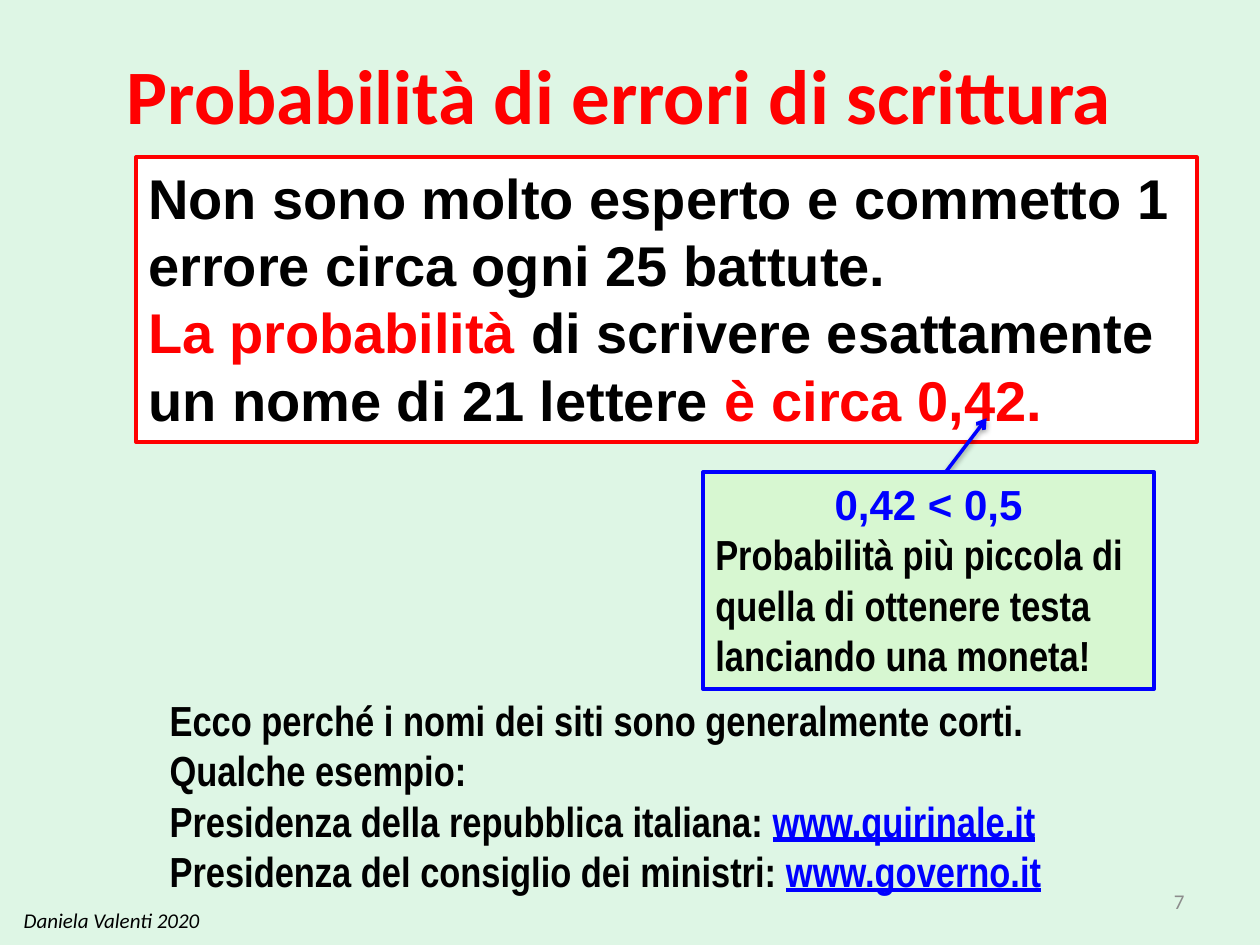
import pptx
import pptx.util
import pptx.dml.color
import pptx.enum.shapes
import pptx.enum.text
import pptx.oxml

Cm = pptx.util.Cm
Pt = pptx.util.Pt
RGBColor = pptx.dml.color.RGBColor
Align = pptx.enum.text.PP_ALIGN
Anchor = pptx.enum.text.MSO_ANCHOR

MINT = RGBColor(0xDE, 0xF6, 0xE5)
GREEN = RGBColor(0xD7, 0xF7, 0xD1)
WHITE = RGBColor(0xFF, 0xFF, 0xFF)
BLACK = RGBColor(0, 0, 0)
GREY = RGBColor(0x8C, 0x8C, 0x8C)
RED = RGBColor(0xFF, 0, 0)
BLUE = RGBColor(0, 0, 0xFF)

HEADING = {"name": "Calibri", "size": Pt(44), "bold": True}
STATEMENT = {"name": "Arial", "size": Pt(32), "bold": True}
RESULT = {"name": "Arial", "size": Pt(24), "bold": True}
NOTE = {"name": "Arial Narrow", "size": Pt(24), "bold": True}
LINK = {**NOTE, "underline": True}
AUTHOR = {"name": "Calibri", "size": Pt(12), "italic": True}
NUMBER = {"name": "Calibri", "size": Pt(12)}

TITLE = {
    "place": (1.7, 0.84, 21.59, 2.11),
    "anchor": Anchor.MIDDLE,
    "paras": [(Align.CENTER, [("Probabilità di errori di scrittura", HEADING, RED)])],
}
BOXES = [
    {
        "place": (0, 18.03, 4.5, 1.02),
        "anchor": Anchor.MIDDLE,
        "paras": [(Align.CENTER, [("Daniela Valenti 2020", AUTHOR, BLACK)])],
    },
    {
        "place": (18.2, 17.65, 5.93, 1.02),
        "anchor": Anchor.MIDDLE,
        "paras": [(Align.RIGHT, [("7", NUMBER, GREY)])],
    },
    {
        "place": (2.74, 3.17, 21.39, 5.74),
        "fill": WHITE,
        "line": RED,
        "paras": [
            (Align.LEFT, [("Non sono molto esperto e commetto 1 errore circa ogni 25 battute.", STATEMENT, BLACK)]),
            (Align.LEFT, [
                ("La probabilità ", STATEMENT, RED),
                ("di scrivere esattamente un nome di 21 lettere ", STATEMENT, BLACK),
                ("è circa 0,42.", STATEMENT, RED),
            ]),
        ],
    },
    {
        "place": (14.17, 9.52, 9.1, 4.37),
        "fill": GREEN,
        "line": BLUE,
        "paras": [
            (Align.CENTER, [("0,42 < 0,5", RESULT, BLUE)]),
            (Align.LEFT, [("Probabilità più piccola di quella di ottenere testa lanciando una moneta!", NOTE, BLACK)]),
        ],
    },
    {
        "place": (3.17, 13.87, 20.53, 4.37),
        "paras": [
            (Align.LEFT, [("Ecco perché i nomi dei siti sono generalmente corti. Qualche esempio:", NOTE, BLACK)]),
            (Align.LEFT, [("Presidenza della repubblica italiana: ", NOTE, BLACK), ("www.quirinale.it", LINK, BLUE)]),
            (Align.LEFT, [("Presidenza del consiglio dei ministri: ", NOTE, BLACK), ("www.governo.it", LINK, BLUE)]),
        ],
    },
]
ARROW = (18.42, 10.36, 19.89, 8.43)
ARROW_BEFORE = GREEN

NAMESPACE = 'xmlns:a="http://schemas.openxmlformats.org/drawingml/2006/main"'
ARROW_HEAD = f'<a:tailEnd {NAMESPACE} type="arrow"/>'
ARROW_SHADOW = (
    f'<a:effectLst {NAMESPACE}><a:outerShdw blurRad="40000" dist="20000" dir="5400000" rotWithShape="0">'
    '<a:srgbClr val="000000"><a:alpha val="38000"/></a:srgbClr></a:outerShdw></a:effectLst>'
)


def write(frame, content):
    frame.word_wrap = True
    frame.auto_size = pptx.enum.text.MSO_AUTO_SIZE.NONE
    frame.vertical_anchor = content.get("anchor", Anchor.TOP)
    for index, (alignment, spans) in enumerate(content["paras"]):
        para = frame.add_paragraph() if index else frame.paragraphs[0]
        para.alignment = alignment
        for text, style, color in spans:
            span = para.add_run()
            span.text = text
            for name, value in style.items():
                setattr(span.font, name, value)
            span.font.color.rgb = color


def add_box(page, content):
    place = [Cm(length) for length in content["place"]]
    if "fill" in content:
        box = page.shapes.add_shape(pptx.enum.shapes.MSO_SHAPE.RECTANGLE, *place)
        box.shadow.inherit = False
        box.fill.solid()
        box.fill.fore_color.rgb = content["fill"]
        box.line.color.rgb = content["line"]
        box.line.width = Pt(2)
    else:
        box = page.shapes.add_textbox(*place)
    write(box.text_frame, content)


def add_arrow(page):
    ends = [Cm(length) for length in ARROW]
    arrow = page.shapes.add_connector(pptx.enum.shapes.MSO_CONNECTOR.STRAIGHT, *ends)
    arrow.line.color.rgb = BLUE
    arrow.line.width = Pt(2)
    arrow.line._get_or_add_ln().append(pptx.oxml.parse_xml(ARROW_HEAD))
    arrow._element.spPr.append(pptx.oxml.parse_xml(ARROW_SHADOW))


def main():
    deck = pptx.Presentation()
    deck.slide_width, deck.slide_height = Cm(25.4), Cm(19.05)
    page = deck.slides.add_slide(deck.slide_layouts[5])
    page.background.fill.solid()
    page.background.fill.fore_color.rgb = MINT

    title = page.shapes.title
    title.left, title.top, title.width, title.height = [Cm(length) for length in TITLE["place"]]
    write(title.text_frame, TITLE)

    for content in BOXES:
        if content.get("fill") == ARROW_BEFORE:
            add_arrow(page)
        add_box(page, content)
    deck.save("out.pptx")


if __name__ == "__main__":
    main()
